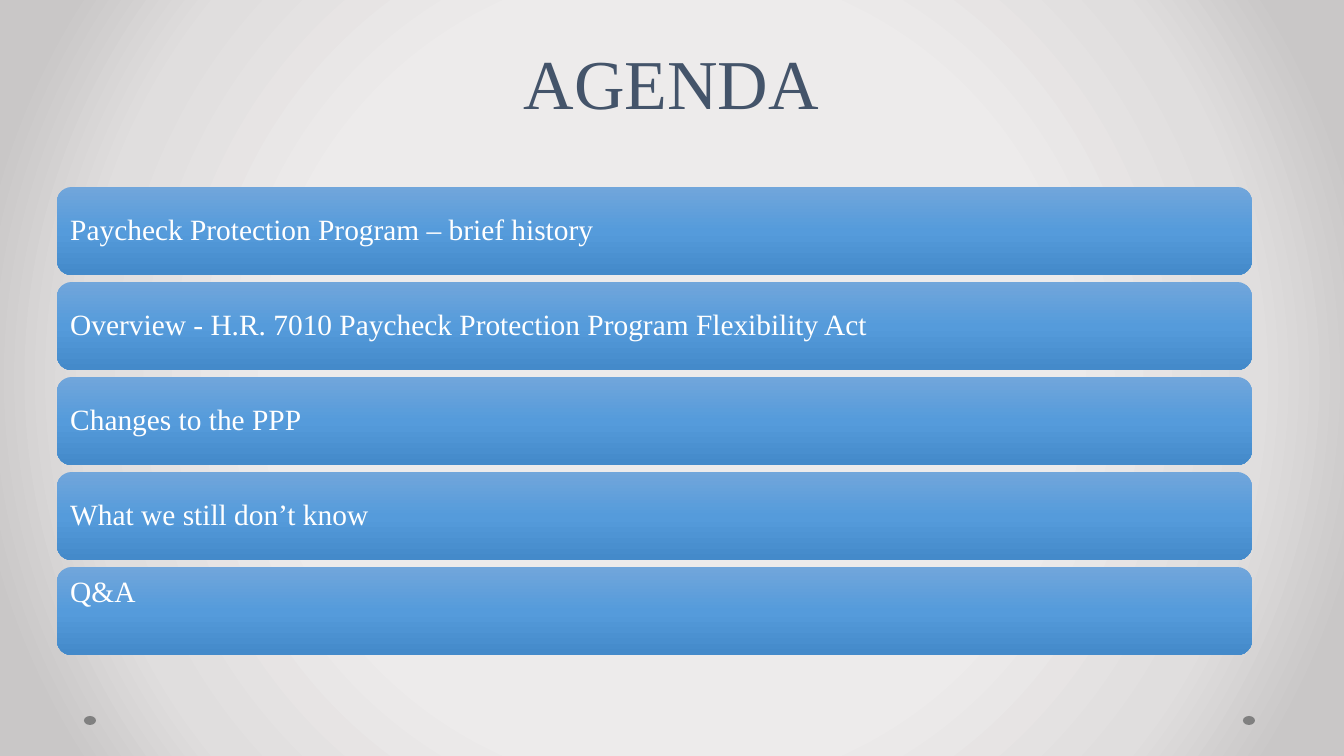
from lxml.etree import SubElement
from pptx import Presentation
from pptx.dml.color import RGBColor
from pptx.enum.shapes import MSO_SHAPE as Shape
from pptx.enum.text import MSO_ANCHOR as Anchor, MSO_AUTO_SIZE as AutoSize, PP_ALIGN as Align
from pptx.oxml.ns import qn
from pptx.util import Pt

PX = 12192000 / 1344
FONT = "Times New Roman"
COLORS = {"title": "44546A", "text": "FFFFFF", "dot": "808080"}
BACKDROP_STOPS = {50: "EDEBEB", 76: "E0DEDE", 92: "C9C7C7"}
BAR_STOPS = {0: "71A6DB", 50: "559BDB", 100: "448ACA"}


def px(*lengths):
    return [round(length * PX) for length in lengths]


def set_gradient(properties, stops, radial=False):
    """Swap the solid fill of a properties element for a gradient."""
    solid = properties.find(qn("a:solidFill"))
    gradient = properties.makeelement(qn("a:gradFill"), {"rotWithShape": "1"})
    stop_list = SubElement(gradient, qn("a:gsLst"))
    for percent, color in stops.items():
        stop = SubElement(stop_list, qn("a:gs"), pos=str(percent * 1000))
        SubElement(stop, qn("a:srgbClr"), val=color)
    if radial:
        circle = SubElement(gradient, qn("a:path"), {"path": "circle"})
        SubElement(circle, qn("a:fillToRect"), l="50000", t="50000", r="50000", b="50000")
    else:
        SubElement(gradient, qn("a:lin"), ang="5400000", scaled="0")
    properties.replace(solid, gradient)


deck = Presentation()
deck.slide_width, deck.slide_height = px(1344, 756)
page = deck.slides.add_slide(deck.slide_layouts[5])

# Background
page.background.fill.solid()
set_gradient(page.element.find(".//" + qn("p:bgPr")), BACKDROP_STOPS, radial=True)

for left in (84, 1243):
    dot = page.shapes.add_shape(Shape.OVAL, *px(left, 716, 12, 9))
    dot.shadow.inherit = False
    dot.fill.solid()
    dot.fill.fore_color.rgb = RGBColor.from_string(COLORS["dot"])
    dot.line.fill.background()

# Title
title = page.shapes.title
title.left, title.top, title.width, title.height = px(57, 27, 1229, 102)
frame = title.text_frame
frame.text = "AGENDA"
frame.auto_size = AutoSize.NONE
frame.vertical_anchor = Anchor.BOTTOM
para = frame.paragraphs[0]
para.alignment = Align.CENTER
para.line_spacing = Pt(48)
font = para.runs[0].font
font.name, font.size = FONT, Pt(50)
font.color.rgb = RGBColor.from_string(COLORS["title"])

# Agenda bars
topics = [
    ("Paycheck Protection Program – brief history", Anchor.MIDDLE),
    ("Overview - H.R. 7010 Paycheck Protection Program Flexibility Act", Anchor.MIDDLE),
    ("Changes to the PPP", Anchor.MIDDLE),
    ("What we still don’t know", Anchor.MIDDLE),
    ("Q&A", Anchor.TOP),
]
for index, (topic, anchor) in enumerate(topics):
    bar = page.shapes.add_shape(Shape.ROUNDED_RECTANGLE, *px(57, 187 + 95 * index, 1195, 88))
    bar.shadow.inherit = False
    bar.fill.solid()
    set_gradient(bar.element.spPr, BAR_STOPS)
    bar.line.fill.background()
    frame = bar.text_frame
    frame.text = topic
    frame.word_wrap = True
    frame.vertical_anchor = anchor
    # The rounded corners already inset the text by about 4 px
    frame.margin_left, frame.margin_right, frame.margin_top, frame.margin_bottom = px(9, 9, 6, 6)
    para = frame.paragraphs[0]
    para.alignment = Align.LEFT
    para.line_spacing = 0.9
    font = para.runs[0].font
    font.name, font.size = FONT, Pt(21)
    font.color.rgb = RGBColor.from_string(COLORS["text"])

deck.save("out.pptx")
